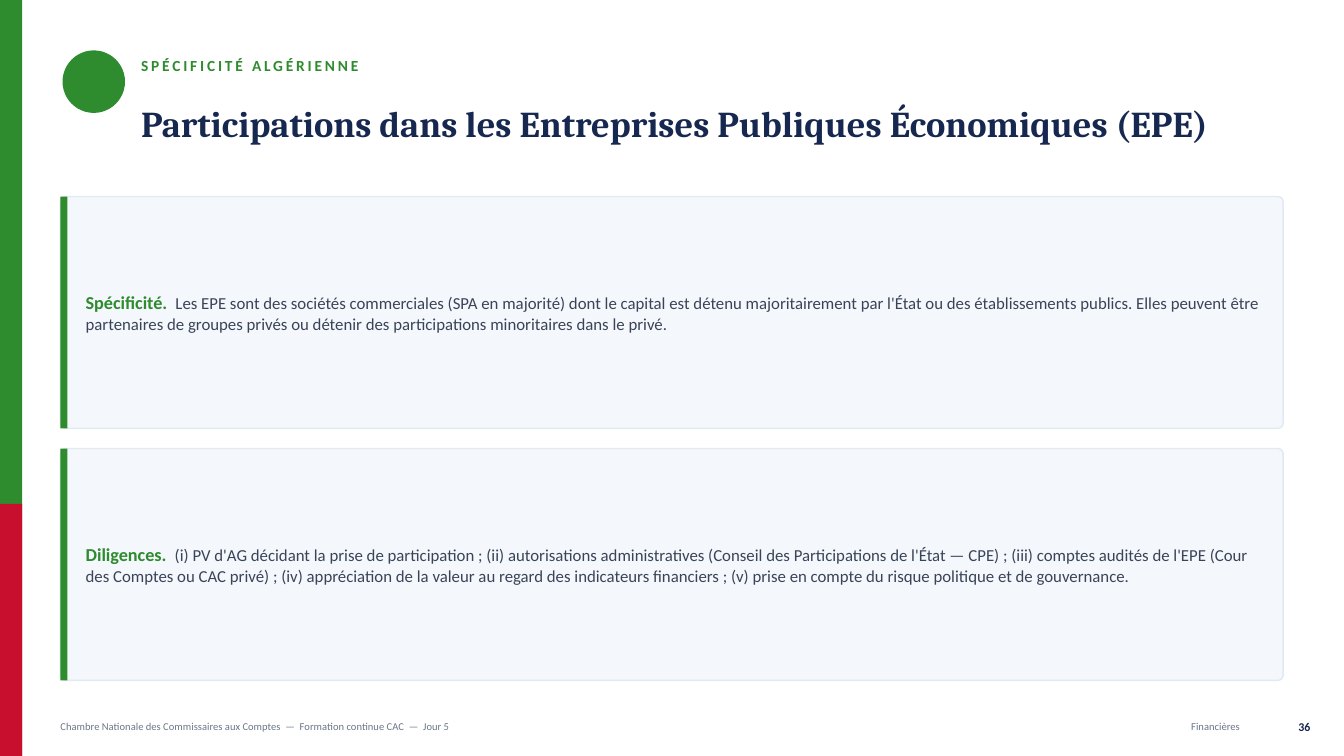
import pptx
import pptx.dml.color
import pptx.enum.shapes
import pptx.enum.text
import pptx.util

Pt = pptx.util.Pt
SHAPES = pptx.enum.shapes.MSO_SHAPE
ALIGN = pptx.enum.text.PP_ALIGN

GREEN, RED, NAVY = "2E8B2E", "C8102E", "16284F"
BODY, MUTED, PANEL, BORDER = "3A4458", "6B7689", "F4F7FB", "E2E9F2"

LABEL = {"size": Pt(13), "bold": True, "color": GREEN}
DETAIL = {"size": Pt(12), "color": BODY}
FOOTNOTE = {"size": Pt(7.5), "color": MUTED}
PAGE_NUMBER = {"size": Pt(8.5), "bold": True, "color": NAVY}

CARDS = [
    ("Spécificité.  ",
     "Les EPE sont des sociétés commerciales (SPA en majorité) dont le capital est détenu "
     "majoritairement par l'État ou des établissements publics. Elles peuvent être partenaires "
     "de groupes privés ou détenir des participations minoritaires dans le privé."),
    ("Diligences.  ",
     "(i) PV d'AG décidant la prise de participation ; (ii) autorisations administratives "
     "(Conseil des Participations de l'État — CPE) ; (iii) comptes audités de l'EPE (Cour des "
     "Comptes ou CAC privé) ; (iv) appréciation de la valeur au regard des indicateurs "
     "financiers ; (v) prise en compte du risque politique et de gouvernance."),
]


def rgb(value):
    return pptx.dml.color.RGBColor.from_string(value)


def add_block(slide, kind, box, fill, border=None):
    shape = slide.shapes.add_shape(kind, *map(Pt, box))
    shape.shadow.inherit = False
    shape.fill.solid()
    shape.fill.fore_color.rgb = rgb(fill)
    if border:
        shape.line.color.rgb = rgb(border)
        shape.line.width = Pt(1)
    else:
        shape.line.fill.background()
    return shape


def add_text(slide, box, runs, alignment=ALIGN.LEFT):
    """Place one paragraph made of (text, format) runs and return it."""
    frame = slide.shapes.add_textbox(*map(Pt, box)).text_frame
    settings = {"word_wrap": True, "vertical_anchor": pptx.enum.text.MSO_ANCHOR.MIDDLE,
                "margin_left": 0, "margin_top": 0, "margin_right": 0, "margin_bottom": 0}
    for name, value in settings.items():
        setattr(frame, name, value)
    paragraph = frame.paragraphs[0]
    paragraph.alignment = alignment
    for text, formats in runs:
        run = paragraph.add_run()
        run.text = text
        for name, value in {"name": "Calibri", "bold": False, **formats}.items():
            if name == "color":
                run.font.color.rgb = rgb(value)
            else:
                setattr(run.font, name, value)
    return paragraph


def add_side_band(slide, left, top, width, height):
    red_height = height / 3
    add_block(slide, SHAPES.RECTANGLE, (left, top, width, height), GREEN)
    add_block(slide, SHAPES.RECTANGLE,
              (left, top + height - red_height, width, red_height), RED)


def add_header(slide, left, top, width):
    disc = 44.64
    text_left = left + 56.16
    text_width = width - 56.16
    add_block(slide, SHAPES.OVAL, (left, top, disc, disc), GREEN)
    kicker = add_text(slide, (text_left, top, text_width, 21.6),
                      [("SPÉCIFICITÉ ALGÉRIENNE",
                        {"size": Pt(11), "bold": True, "color": GREEN})])
    kicker.runs[0].font._element.set("spc", "200")
    title = add_text(slide, (text_left, top + 23.04, text_width, 61.2),
                     [("Participations dans les Entreprises Publiques Économiques (EPE)",
                       {"name": "Cambria", "size": Pt(26), "bold": True, "color": NAVY})])
    title.line_spacing = 0.95


def add_card(slide, left, top, width, height, label, detail):
    panel = add_block(slide, SHAPES.ROUNDED_RECTANGLE, (left, top, width, height), PANEL, BORDER)
    panel.adjustments[0] = 0.022
    add_block(slide, SHAPES.RECTANGLE, (left, top, 5.04, height), GREEN)
    add_text(slide, (left + 18, top + 3.6, width - 30.96, height - 7.2),
             [(label, LABEL), (detail, DETAIL)])


def add_footer(slide, left, top, right, height):
    add_text(slide, (left, top, 662.4, height),
             [("Chambre Nationale des Commissaires aux Comptes  —  "
               "Formation continue CAC  —  Jour 5", FOOTNOTE)])
    add_text(slide, (right - 259.2, top, 208.8, height),
             [("Financières", FOOTNOTE)], ALIGN.RIGHT)
    add_text(slide, (right - 36, top, 36, height), [("36", PAGE_NUMBER)], ALIGN.RIGHT)


def main():
    presentation = pptx.Presentation()
    presentation.slide_width, presentation.slide_height = Pt(960), Pt(540)
    slide = presentation.slides.add_slide(presentation.slide_layouts[6])
    slide.background.fill.solid()
    slide.background.fill.fore_color.rgb = rgb("FFFFFF")

    add_side_band(slide, 0, 0, 15.84, 540)
    add_header(slide, 44.64, 36, 869.76)
    card_height, gap = 165.6, 14.4
    for index, (label, detail) in enumerate(CARDS):
        top = 140.4 + index * (card_height + gap)
        add_card(slide, 43.2, top, 873.36, card_height, label, detail)
    add_footer(slide, 43.2, 508.32, 936, 21.6)
    presentation.save("out.pptx")


if __name__ == "__main__":
    main()
